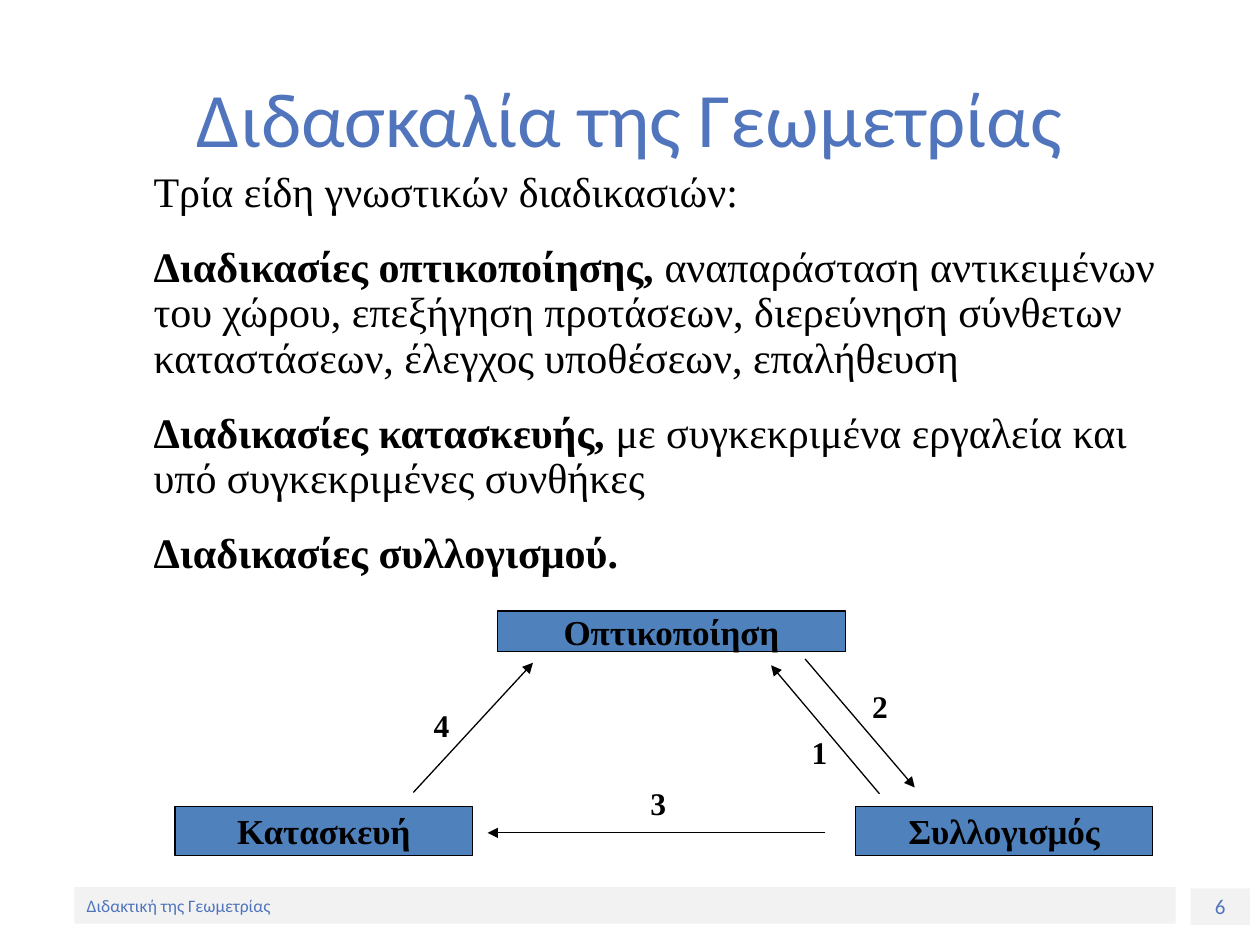
"""Builds a slide on the three cognitive processes in teaching geometry."""
import pptx
import pptx.util
import pptx.dml.color
import pptx.enum.shapes
import pptx.enum.text
import pptx.oxml
import pptx.oxml.ns

Inches = pptx.util.Inches
Pt = pptx.util.Pt
CENTER = pptx.enum.text.PP_ALIGN.CENTER
LEFT = pptx.enum.text.PP_ALIGN.LEFT
MIDDLE = pptx.enum.text.MSO_ANCHOR.MIDDLE
TOP = pptx.enum.text.MSO_ANCHOR.TOP

SERIF, SANS = "Times New Roman", "Calibri"
BLACK, ACCENT, BOX_BLUE, FOOTER_GRAY = "000000", "5075BC", "4F81BD", "F2F2F2"

TITLE = "Διδασκαλία της Γεωμετρίας"
PROCESSES = [
    ("", "Τρία είδη γνωστικών διαδικασιών:"),
    ("Διαδικασίες οπτικοποίησης, ",
     "αναπαράσταση αντικειμένων του χώρου, επεξήγηση προτάσεων, "
     "διερεύνηση σύνθετων καταστάσεων, έλεγχος υποθέσεων, επαλήθευση"),
    ("Διαδικασίες κατασκευής, ",
     "με συγκεκριμένα εργαλεία και υπό συγκεκριμένες συνθήκες"),
    ("Διαδικασίες συλλογισμού.", ""),
]
FOOTER = [
    ("6", (9.45, 7.05, 0.47, 0.29), 12, CENTER),
    ("Διδακτική της Γεωμετρίας", (0.59, 7.04, 8.74, 0.29), 10, LEFT),
]
NODES = [
    ("Οπτικοποίηση", (3.95, 4.85, 2.76, 0.32)),
    ("Κατασκευή", (1.39, 6.4, 2.36, 0.39)),
    ("Συλλογισμός", (6.79, 6.4, 2.36, 0.39)),
]
STEPS = [
    ("1", (6.27, 5.77), (6.98, 6.3), (6.12, 5.28)),
    ("2", (6.75, 5.41), (6.39, 5.23), (7.26, 6.25)),
    ("3", (4.99, 6.18), (6.55, 6.61), (3.87, 6.61)),
    ("4", (3.27, 5.56), (3.28, 6.29), (4.23, 5.26)),
]
STEP_SIZE = (0.47, 0.39)


def rgb(value):
    return pptx.dml.color.RGBColor.from_string(value)


def style(paragraph, size, font, color, align=LEFT, bold=None):
    paragraph.alignment = align
    paragraph.font.size = Pt(size)
    paragraph.font.name = font
    paragraph.font.color.rgb = rgb(color)
    paragraph.font.bold = bold


def write(shape, text, size, font, color, align=CENTER, bold=None, wrap=True):
    frame = shape.text_frame
    frame.word_wrap = wrap
    frame.vertical_anchor = MIDDLE
    frame.text = text
    style(frame.paragraphs[0], size, font, color, align, bold)


def add_textbox(slide, bounds):
    return slide.shapes.add_textbox(*map(Inches, bounds))


def add_rectangle(slide, bounds, fill, line=None):
    rectangle = slide.shapes.add_shape(
        pptx.enum.shapes.MSO_SHAPE.RECTANGLE, *map(Inches, bounds))
    rectangle.shadow.inherit = False
    rectangle.fill.solid()
    rectangle.fill.fore_color.rgb = rgb(fill)
    if line:
        rectangle.line.color.rgb = rgb(line)
        rectangle.line.width = Pt(0.75)
    else:
        rectangle.line.fill.background()
    return rectangle


def add_arrow(slide, start, end):
    arrow = slide.shapes.add_connector(
        pptx.enum.shapes.MSO_CONNECTOR.STRAIGHT, *map(Inches, start + end))
    arrow.line.color.rgb = rgb(BLACK)
    arrow.line.width = Pt(0.75)
    namespace = pptx.oxml.ns.nsdecls("a")
    arrow.line._get_or_add_ln().append(
        pptx.oxml.parse_xml(f'<a:tailEnd {namespace} type="triangle"/>'))
    arrow._element.spPr.append(
        pptx.oxml.parse_xml(f"<a:effectLst {namespace}/>"))


def add_processes(slide):
    frame = add_textbox(slide, (1.12, 1.31, 8.42, 6.56)).text_frame
    frame.word_wrap = True
    frame.vertical_anchor = TOP
    for index, (name, description) in enumerate(PROCESSES):
        paragraph = frame.add_paragraph() if index else frame.paragraphs[0]
        style(paragraph, 24, SERIF, BLACK)
        paragraph.line_spacing = 0.9
        paragraph.space_after = Pt(17)
        for text, bold in ((name, True), (description, False)):
            if text:
                run = paragraph.add_run()
                run.text = text
                run.font.bold = bold


def main():
    deck = pptx.Presentation()
    deck.slide_width, deck.slide_height = Inches(10), Inches(7.5)
    slide = deck.slides.add_slide(deck.slide_layouts[6])

    for text, bounds, size, align in FOOTER:
        write(add_rectangle(slide, bounds, FOOTER_GRAY),
              text, size, SANS, ACCENT, align)
    write(add_textbox(slide, (0.5, 0.3, 9, 1.25)), TITLE, 44, SANS, ACCENT)
    add_processes(slide)
    for name, bounds in NODES:
        write(add_rectangle(slide, bounds, BOX_BLUE, BLACK),
              name, 20, SERIF, BLACK, bold=True, wrap=False)
    for number, position, start, end in STEPS:
        add_arrow(slide, start, end)
        write(add_textbox(slide, position + STEP_SIZE),
              number, 18, SERIF, BLACK, bold=True, wrap=False)

    deck.save("out.pptx")


if __name__ == "__main__":
    main()
